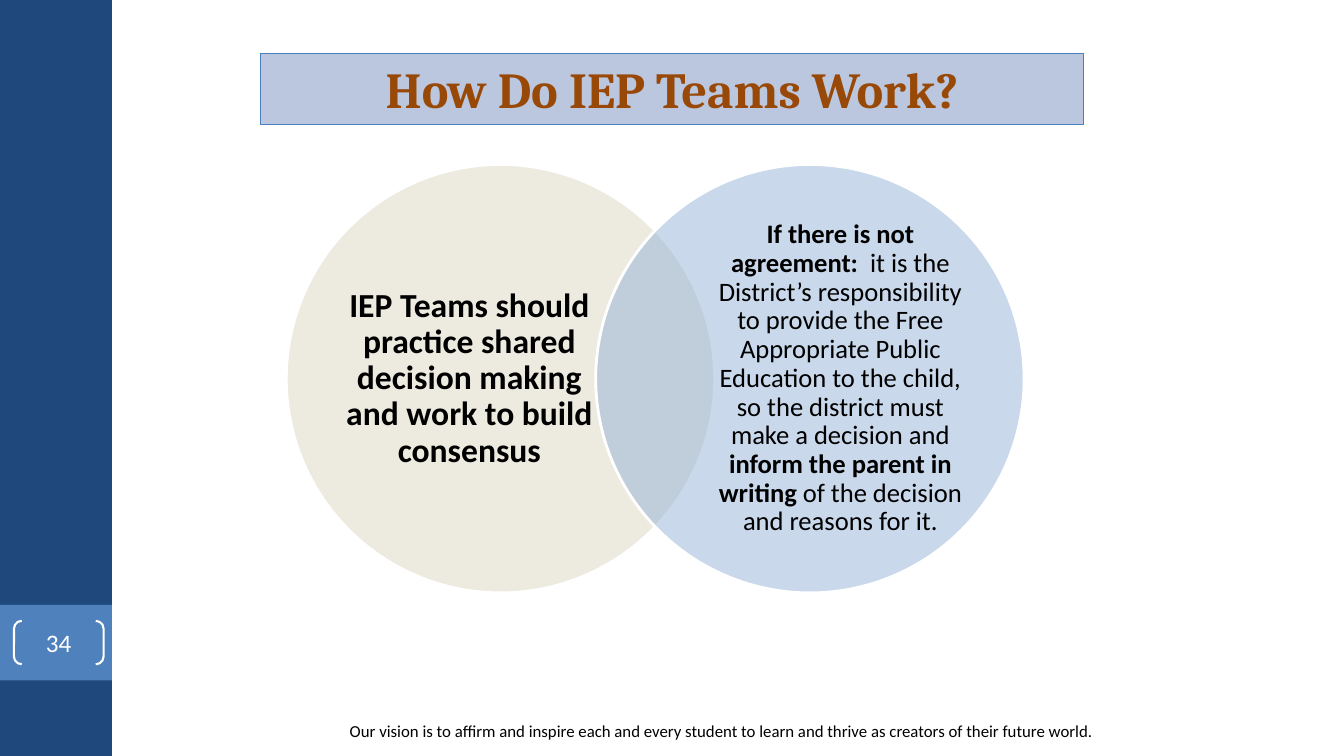
"""Build the slide on how IEP teams work."""
import pptx
import pptx.dml.color
import pptx.enum.shapes
import pptx.enum.text
import pptx.oxml.ns
import pptx.util
from lxml import etree

Pt = pptx.util.Pt
RGBColor = pptx.dml.color.RGBColor
SHAPES = pptx.enum.shapes.MSO_SHAPE
ANCHOR = pptx.enum.text.MSO_ANCHOR

NAVY = RGBColor(0x1F, 0x49, 0x7D)
BLUE = RGBColor(0x4F, 0x81, 0xBD)
TITLE_FILL = RGBColor(0xBB, 0xC7, 0xDE)
TITLE_LINE = RGBColor(0x4B, 0x7E, 0xBC)
BROWN = RGBColor(0x98, 0x48, 0x07)
TAN = RGBColor(0xDD, 0xD9, 0xC3)
SKY = RGBColor(0x95, 0xB3, 0xD7)
WHITE = RGBColor(0xFF, 0xFF, 0xFF)
BLACK = RGBColor(0, 0, 0)

TITLE = "How Do IEP Teams Work?"
VISION = (
    "Our vision is to affirm and inspire each and every student to learn "
    "and thrive as creators of their future world."
)
PAGE_NUMBER = "34"
CONSENSUS = [("IEP Teams should practice shared decision making and work to build consensus", True)]
DISAGREEMENT = [
    ("If there is not agreement:  ", True),
    ("it is the District’s responsibility to provide the Free Appropriate Public "
     "Education to the child, so the district must make a decision and ", False),
    ("inform the parent in writing ", True),
    ("of the decision and reasons for it.", False),
]
VENN = [
    (204.5, 247, TAN, 24, CONSENSUS),
    (425.5, 512, SKY, 19, DISAGREEMENT),
]

SIDEBAR_WIDTH = 80
CIRCLE_TOP, CIRCLE_SIZE = 117.5, 306
LABEL_WIDTH, LABEL_HEIGHT = 176.5, 234


def add_shape(slide, kind, box, fill=None, line=None, line_width=1, opacity=None):
    """Add a flat preset shape."""
    shape = slide.shapes.add_shape(kind, *map(Pt, box))
    shape.shadow.inherit = False
    if fill is None:
        shape.fill.background()
    else:
        shape.fill.solid()
        shape.fill.fore_color.rgb = fill
    if line is None:
        shape.line.fill.background()
    else:
        shape.line.color.rgb = line
        shape.line.width = Pt(line_width)
    if opacity is not None:
        color = shape.fill._xPr.find(".//" + pptx.oxml.ns.qn("a:srgbClr"))
        etree.SubElement(color, pptx.oxml.ns.qn("a:alpha"), val=str(opacity * 1000))
    return shape


def write(shape, runs, size, color, font="Calibri", anchor=ANCHOR.TOP, inset=None, spacing=None):
    """Write one centred paragraph of (text, bold) runs."""
    frame = shape.text_frame
    frame.word_wrap = True
    frame.vertical_anchor = anchor
    if inset is not None:
        frame.margin_left = frame.margin_right = Pt(inset)
        frame.margin_top = frame.margin_bottom = Pt(inset)
    paragraph = frame.paragraphs[0]
    paragraph.alignment = pptx.enum.text.PP_ALIGN.CENTER
    if spacing is not None:
        paragraph.line_spacing = spacing
    paragraph.font.name = font
    paragraph.font.size = Pt(size)
    paragraph.font.color.rgb = color
    for text, bold in runs:
        run = paragraph.add_run()
        run.text = text
        run.font.bold = bold


def main():
    """Draw the slide and save it."""
    presentation = pptx.Presentation()
    presentation.slide_width, presentation.slide_height = Pt(960), Pt(540)
    slide = presentation.slides.add_slide(presentation.slide_layouts[6])

    add_shape(slide, SHAPES.RECTANGLE, (0, 0, SIDEBAR_WIDTH, 540), NAVY)
    add_shape(slide, SHAPES.RECTANGLE, (0, 432, SIDEBAR_WIDTH, 54), BLUE)

    vision = slide.shapes.add_textbox(Pt(73.5), Pt(511), Pt(884), Pt(29))
    write(vision, [(VISION, False)], 12, BLACK)

    label_top = CIRCLE_TOP + (CIRCLE_SIZE - LABEL_HEIGHT) / 2
    for circle_left, label_left, fill, size, runs in VENN:
        add_shape(slide, SHAPES.OVAL, (circle_left, CIRCLE_TOP, CIRCLE_SIZE, CIRCLE_SIZE),
                  fill, WHITE, 2, opacity=50)
        label = slide.shapes.add_textbox(
            Pt(label_left), Pt(label_top), Pt(LABEL_WIDTH), Pt(LABEL_HEIGHT))
        write(label, runs, size, BLACK, anchor=ANCHOR.MIDDLE, inset=0, spacing=0.9)

    title = add_shape(slide, SHAPES.RECTANGLE, (186, 38, 588, 51), TITLE_FILL, TITLE_LINE)
    write(title, [(TITLE, True)], 36, BROWN, font="Cambria")

    brackets = add_shape(slide, SHAPES.DOUBLE_BRACKET, (10, 443.5, 64, 31), line=WHITE, line_width=1.5)
    brackets.adjustments[0] = 0.18
    write(brackets, [(PAGE_NUMBER, False)], 18, WHITE, anchor=ANCHOR.MIDDLE, inset=0)

    presentation.save("out.pptx")


if __name__ == "__main__":
    main()
